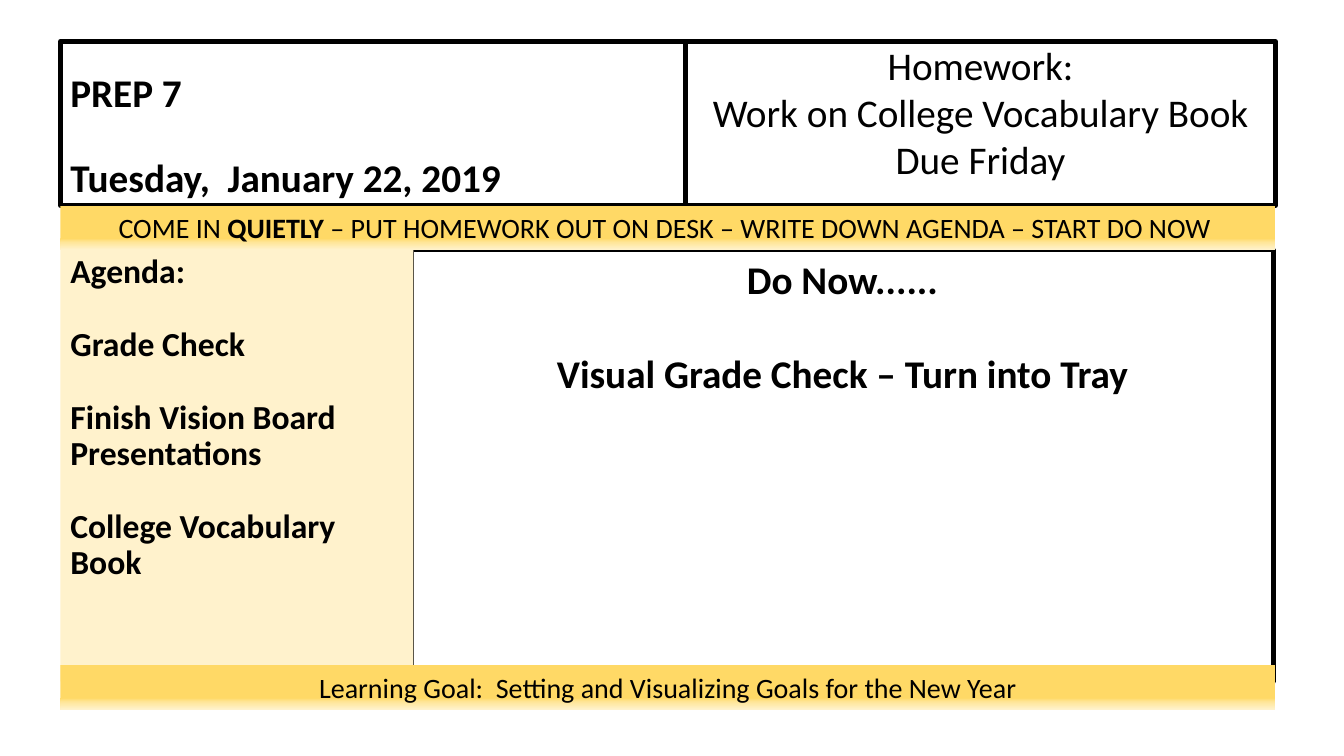
import lxml.etree
import pptx
import pptx.dml.color
import pptx.enum.text
import pptx.oxml.ns
import pptx.util

Inches = pptx.util.Inches
Pt = pptx.util.Pt
qn = pptx.oxml.ns.qn
ALIGN = pptx.enum.text.PP_ALIGN
ANCHOR = pptx.enum.text.MSO_ANCHOR

COLORS = {"ink": "000000", "gold": "FFD966", "light_gold": "FFE699", "cream": "FFF2CC"}
BAND_STOPS = [(0, "gold"), (74, "gold"), (83, "light_gold"), (100, "cream")]
LEFT, TOP, WIDTH = 0.6, 0.41, 12.05
HEADER_HEIGHT, BAND_HEIGHT = 1.63, 0.44


def rgb(name):
    """Return the named palette colour."""
    return pptx.dml.color.RGBColor.from_string(COLORS[name])


def add_panel(slide, box, anchor=ANCHOR.TOP):
    """Add a wrapping text panel in box and return it."""
    panel = slide.shapes.add_textbox(*(Inches(length) for length in box))
    panel.text_frame.word_wrap = True
    panel.text_frame.vertical_anchor = anchor
    return panel


def outline(panel):
    """Give a panel the heavy black border."""
    panel.line.color.rgb = rgb("ink")
    panel.line.width = Pt(3.25)


def write(panel, paragraphs, size, align=ALIGN.LEFT, spacing=1.0, gap=0):
    """Write paragraphs, each a list of (text, bold) runs, with gap points between."""
    frame = panel.text_frame
    for index, runs in enumerate(paragraphs):
        paragraph = frame.add_paragraph() if index else frame.paragraphs[0]
        paragraph.alignment = align
        paragraph.line_spacing = spacing
        paragraph.space_before = Pt(gap if index else 0)
        for text, bold in runs:
            run = paragraph.add_run()
            run.text = text
            run.font.name = "Calibri"
            run.font.size = Pt(size)
            run.font.bold = bold
            run.font.color.rgb = rgb("ink")


def add_class_title(slide, box):
    """Place the class name and date at the bottom of box."""
    title = add_panel(slide, box, ANCHOR.BOTTOM)
    outline(title)
    lines = ["PREP 7", "Tuesday,  January 22, 2019"]
    write(title, [[(line, True)] for line in lines], 28, spacing=0.9, gap=30)


def add_homework(slide, box):
    """Place the centred homework note in box."""
    homework = add_panel(slide, box)
    outline(homework)
    lines = ["Homework:", "Work on College Vocabulary Book", "Due Friday"]
    write(homework, [[(line, False)] for line in lines], 28, ALIGN.CENTER)
    homework.text_frame.paragraphs[0].line_spacing = 0.9


def add_do_now(slide, box):
    """Place the Do Now task in box."""
    do_now = add_panel(slide, box)
    outline(do_now)
    lines = ["Do Now......", "Visual Grade Check – Turn into Tray"]
    write(do_now, [[(line, True)] for line in lines], 28, ALIGN.CENTER, gap=33.6)


def add_agenda(slide, box):
    """Place the cream agenda list in box."""
    agenda = add_panel(slide, box)
    agenda.fill.solid()
    agenda.fill.fore_color.rgb = rgb("cream")
    items = ["Agenda:", "Grade Check", "Finish Vision Board Presentations",
             "College Vocabulary Book"]
    write(agenda, [[(item, True)] for item in items], 24, spacing=0.9, gap=26)


def add_band(slide, box, runs):
    """Place a gold gradient band with one centred line in box."""
    band = add_panel(slide, box)
    band.fill.gradient()
    band.fill.gradient_angle = 270
    stops = next(band.element.iter(qn("a:gsLst")))
    for stop in list(stops):
        stops.remove(stop)
    for percent, name in BAND_STOPS:
        stop = lxml.etree.SubElement(stops, qn("a:gs"), pos=str(percent * 1000))
        lxml.etree.SubElement(stop, qn("a:srgbClr"), val=COLORS[name])
    write(band, [runs], 20, ALIGN.CENTER)


def add_agenda_slide(deck):
    """Add the daily agenda slide."""
    slide = deck.slides.add_slide(deck.slide_layouts[6])
    title_width, agenda_width = 6.2, 3.5
    band_top = TOP + HEADER_HEIGHT
    body_top = band_top + BAND_HEIGHT
    add_class_title(slide, (LEFT, TOP, title_width, HEADER_HEIGHT))
    add_homework(slide, (LEFT + title_width, TOP, WIDTH - title_width, HEADER_HEIGHT))
    add_do_now(slide, (4.08, body_top, 8.55, 4.28))
    add_band(slide, (LEFT, band_top, WIDTH, BAND_HEIGHT), [
        ("COME IN ", False),
        ("QUIETLY", True),
        (" – PUT HOMEWORK OUT ON DESK – WRITE DOWN AGENDA – START DO NOW ", False),
    ])
    add_agenda(slide, (LEFT, body_top, agenda_width, 4.28))
    add_band(slide, (LEFT, 6.6, WIDTH, BAND_HEIGHT), [
        ("Learning Goal:  Setting and Visualizing Goals for the New Year", False),
    ])


def main():
    """Build and save the deck."""
    deck = pptx.Presentation()
    deck.slide_width, deck.slide_height = Inches(13.33), Inches(7.5)
    add_agenda_slide(deck)
    deck.save("out.pptx")


if __name__ == "__main__":
    main()
